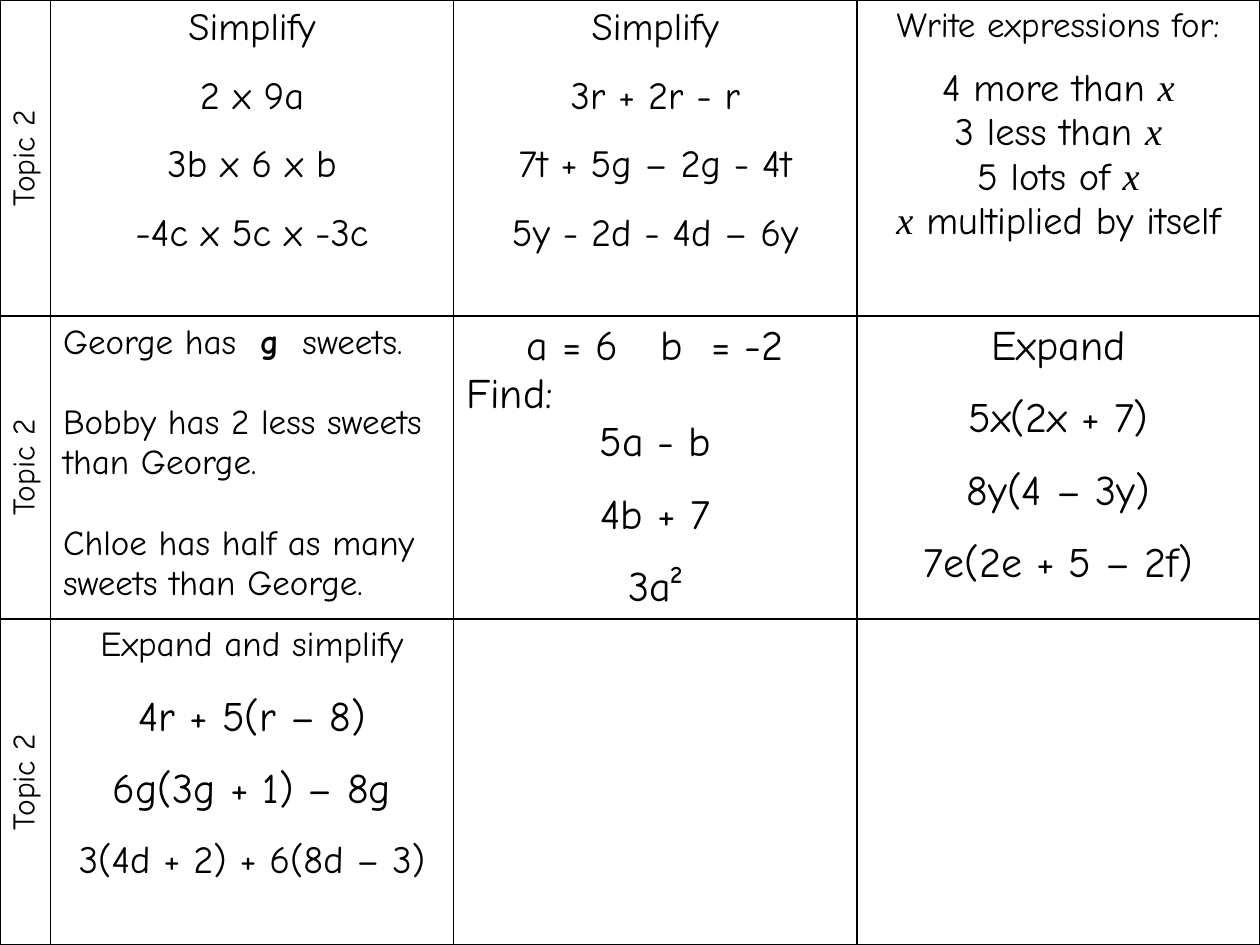
from dataclasses import dataclass

from lxml.etree import SubElement
from pptx import Presentation
from pptx.dml.color import RGBColor
from pptx.enum.text import PP_ALIGN as Align
from pptx.oxml.ns import qn
from pptx.util import Pt

BLACK = "000000"
FONT, MATH_FONT = "Comic Neue", "Times New Roman"
LINE_RATIO = 1.15  # line height of the font, relative to its size
COL_WIDTHS = [28.8, 230.4, 230.4, 230.4]
ROW_HEIGHTS = [180.72, 172.8, 186.48]


@dataclass
class Run:
    text: str
    bold: bool = False
    italic: bool = False
    font: str = FONT


@dataclass
class Line:
    runs: list[Run]
    size: float
    gap: float = 0  # size of the blank line that the space above equals
    align: Align = Align.CENTER


def line(text: str, size: float, gap: float = 0, align: Align = Align.CENTER) -> Line:
    return Line([Run(text)], size, gap, align)


def exercise(title: Line, size: float, *sums: str) -> list[Line]:
    """A heading followed by evenly spaced sums."""
    return [title] + [line(text, size, 12) for text in sums]


def color(hex_value: str) -> RGBColor:
    return RGBColor.from_string(hex_value)


X = Run("x", italic=True, font=MATH_FONT)

# Cards, row by row
CARDS: list[list[list[Line]]] = [
    [
        exercise(line("Simplify", 22), 22, "2 x 9a", "3b x 6 x b", "-4c x 5c x -3c"),
        exercise(line("Simplify", 22), 22,
                 "3r + 2r - r", "7t + 5g – 2g - 4t", "5y - 2d - 4d – 6y"),
        [
            line("Write expressions for:", 20),
            Line([Run("4 more than "), X], 22, 10),
            Line([Run("3 less than "), X], 22),
            Line([Run("5 lots of "), X], 22),
            Line([X, Run(" multiplied by itself")], 22),
        ],
    ],
    [
        [
            Line([Run("George has  "), Run("g", bold=True), Run("  sweets.")],
                 20, align=Align.LEFT),
            line("Bobby has 2 less sweets than George.", 20, 20, Align.LEFT),
            line("Chloe has half as many sweets than George.", 20, 20, Align.LEFT),
        ],
        [
            line("a = 6   b  = -2", 24),
            line("Find:", 24, align=Align.LEFT),
            *exercise(line("5a - b", 24), 24, "4b + 7", "3a²"),
        ],
        exercise(line("Expand", 24), 24, "5x(2x + 7)", "8y(4 – 3y)", "7e(2e + 5 – 2f)"),
    ],
    [
        [
            line("Expand and simplify", 20),
            line("4r + 5(r – 8)", 24, 14),
            line("6g(3g + 1) – 8g", 24, 12),
            line("3(4d + 2) + 6(8d – 3)", 22, 12),
        ],
        [],
        [],
    ],
]


def style_cell(cell) -> None:
    """Thin black borders and no fill."""
    tc_pr = cell._tc.get_or_add_tcPr()
    for side in ("lnL", "lnR", "lnT", "lnB"):
        ln = SubElement(tc_pr, qn(f"a:{side}"), w=str(Pt(1)))
        SubElement(SubElement(ln, qn("a:solidFill")), qn("a:srgbClr"), val=BLACK)
    cell.fill.background()


def write_lines(cell, lines: list[Line]) -> None:
    tf = cell.text_frame
    for i, item in enumerate(lines):
        p = tf.add_paragraph() if i else tf.paragraphs[0]
        p.alignment = item.align
        p.space_before = Pt(round(item.gap * LINE_RATIO, 1))
        for run in item.runs:
            r = p.add_run()
            r.text = run.text
            formats = {"name": run.font, "size": Pt(item.size),
                       "bold": run.bold, "italic": run.italic}
            for name, value in formats.items():
                setattr(r.font, name, value)
            r.font.color.rgb = color(BLACK)


def main() -> None:
    prs = Presentation()
    prs.slide_width, prs.slide_height = Pt(720), Pt(540)
    s = prs.slides.add_slide(prs.slide_layouts[6])

    # Card grid
    table = s.shapes.add_table(len(ROW_HEIGHTS), len(COL_WIDTHS), Pt(0), Pt(0),
                               Pt(sum(COL_WIDTHS)), Pt(sum(ROW_HEIGHTS))).table
    table.first_row = table.horz_banding = False
    for column, width in zip(table.columns, COL_WIDTHS):
        column.width = Pt(width)
    for row, height in zip(table.rows, ROW_HEIGHTS):
        row.height = Pt(height)

    # Topic label, then the cards of each row
    for row, cards in zip(table.rows, CARDS):
        for cell, lines in zip(row.cells, [[line("Topic 2", 18)], *cards]):
            style_cell(cell)
            write_lines(cell, lines)
        row.cells[0]._tc.get_or_add_tcPr().set("vert", "vert270")

    prs.save("out.pptx")


if __name__ == "__main__":
    main()
